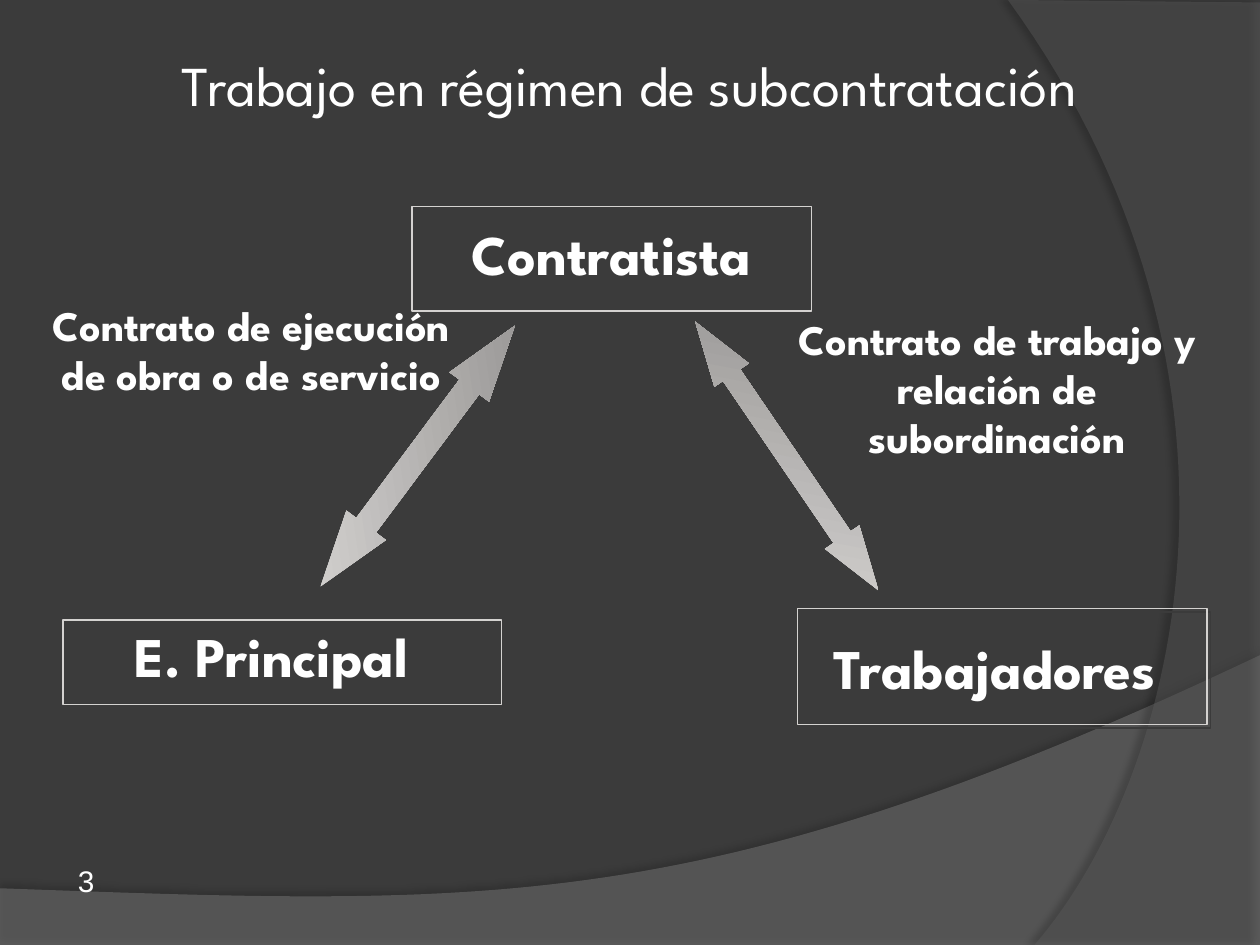
"""Build the slide on work under a subcontracting regime."""
from dataclasses import dataclass

from lxml import etree
from pptx import Presentation
from pptx import util as u
from pptx.dml.color import RGBColor
from pptx.enum import shapes, text
from pptx.oxml import ns

COLORS = {
    "background": "3B3B3B", "white": "FFFFFF", "black": "000000", "border": "D4D2D0",
    "arrow_end": "989695", "wave": "7F7F7F", "arc": "5E5E5E",
}
FONT = "League Spartan"
ARROW_GUIDES = {"adj1": 50000, "adj2": 155000}
Point = tuple[float, float]


@dataclass(frozen=True)
class Box:
    left: float
    top: float
    width: float
    height: float

    def lengths(self) -> list[u.Length]:
        return [u.Inches(value) for value in (self.left, self.top, self.width, self.height)]


@dataclass(frozen=True)
class Shadow:
    color: str
    alpha: int
    blur: float
    distance: float
    angle: int


@dataclass(frozen=True)
class Label:
    content: str
    box: Box
    size: float = 32
    wrap: bool = True
    bold: bool = True
    font: str = FONT
    align: text.PP_ALIGN = text.PP_ALIGN.CENTER
    anchor: text.MSO_ANCHOR = text.MSO_ANCHOR.TOP
    insets: tuple[float, float, float, float] = (0, 0, 0, 0)
    fixed_lines: bool = True


@dataclass(frozen=True)
class Arrow:
    box: Box
    rotation: float


@dataclass(frozen=True)
class Party:
    label: Label
    frame: Box
    arrow: Arrow | None = None


@dataclass(frozen=True)
class Backdrop:
    corners: list[Point]
    curve: list[Point]
    color: str
    alpha: int
    shadow: Shadow


SHAPE_SHADOW = Shadow("background", 100, 0, 2.8, 45)
BACKDROPS = [
    Backdrop([(0, 7.05), (0, 7.51), (10, 7.51)],
             [(10, 5.2), (5.59, 7.29), (3.91, 7.19), (0, 7.05)],
             "wave", 45, Shadow("black", 35, 4, 3.5, 270)),
    Backdrop([(10, 0.02), (10, 7.5)],
             [(8.21, 7.5), (9.35, 6.19), (10.18, 3), (8, 0)],
             "arc", 40, Shadow("black", 45, 4, 4, 180)),
]
HEADINGS = [
    Label("3", Box(0.52, 6.63, 0.51, 0.5), 17, bold=False, font="Arial",
          align=text.PP_ALIGN.LEFT, anchor=text.MSO_ANCHOR.BOTTOM,
          insets=(0.1, 0.05, 0.1, 0), fixed_lines=False),
    Label("Trabajo en régimen de subcontratación", Box(0.5, 0.39, 8.99, 0.56), 32.2,
          bold=False, anchor=text.MSO_ANCHOR.MIDDLE,
          insets=(0.05, 0.05, 0.05, 0.05), fixed_lines=False),
]
PARTIES = [
    Party(Label("Contratista", Box(3.27, 1.89, 3.17, 0.39)), Box(3.27, 1.64, 3.17, 0.83)),
    Party(Label("E. Principal", Box(0.68, 5.08, 2.95, 0.39), wrap=False),
          Box(0.5, 4.92, 3.48, 0.67), Arrow(Box(3.12, 2.33, 0.39, 2.58), 36.7)),
    Party(Label("Trabajadores", Box(6.44, 5.17, 2.91, 0.39), wrap=False),
          Box(6.33, 4.83, 3.25, 0.92), Arrow(Box(6.08, 2.33, 0.33, 2.58), 325.7)),
]
CONTRACTS = [
    Label("Contrato de trabajo y relación de subordinación", Box(6.25, 2.5, 3.33, 1.17), 24),
    Label("Contrato de ejecución de obra o de servicio", Box(0.33, 2.39, 3.33, 1.17), 24),
]


def rgb(name: str) -> RGBColor:
    """Return the named colour."""
    return RGBColor.from_string(COLORS[name])


def add_alpha(color, percent: int) -> None:
    """Set the opacity of a colour element."""
    etree.SubElement(color, ns.qn("a:alpha"), val=str(percent * 1000))


def add_shadow(shape, shadow: Shadow) -> None:
    """Give a shape an outer shadow."""
    shape.shadow.inherit = False
    effects = shape._element.spPr.find(ns.qn("a:effectLst"))
    outer = etree.SubElement(
        effects, ns.qn("a:outerShdw"), blurRad=str(int(u.Pt(shadow.blur))),
        dist=str(int(u.Pt(shadow.distance))), dir=str(shadow.angle * 60000),
        algn="ctr", rotWithShape="0")
    color = etree.SubElement(outer, ns.qn("a:srgbClr"), val=COLORS[shadow.color])
    add_alpha(color, shadow.alpha)


def curve_points(curve: list[Point], steps: int = 60) -> list[Point]:
    """Sample a cubic curve given by its four control points."""
    points = []
    for step in range(steps + 1):
        t = step / steps
        weights = ((1 - t) ** 3, 3 * t * (1 - t) ** 2, 3 * t ** 2 * (1 - t), t ** 3)
        points.append(tuple(sum(w * point[axis] for w, point in zip(weights, curve))
                            for axis in (0, 1)))
    return points


def add_backdrop(target, backdrop: Backdrop) -> None:
    """Draw a translucent curved background area."""
    outline = [(u.Inches(x), u.Inches(y))
               for x, y in backdrop.corners + curve_points(backdrop.curve)]
    builder = target.build_freeform(*outline[0], scale=1.0)
    builder.add_line_segments(outline[1:], close=True)
    shape = builder.convert_to_shape()
    shape.fill.solid()
    shape.fill.fore_color.rgb = rgb(backdrop.color)
    add_alpha(shape._element.spPr.find(".//" + ns.qn("a:srgbClr")), backdrop.alpha)
    shape.line.fill.background()
    add_shadow(shape, backdrop.shadow)


def add_label(target, label: Label) -> None:
    """Draw a text box."""
    frame = target.add_textbox(*label.box.lengths()).text_frame
    frame.word_wrap = label.wrap
    frame.vertical_anchor = label.anchor
    (frame.margin_left, frame.margin_top, frame.margin_right,
     frame.margin_bottom) = map(u.Inches, label.insets)
    paragraph = frame.paragraphs[0]
    paragraph.alignment = label.align
    if label.fixed_lines:
        frame.auto_size = text.MSO_AUTO_SIZE.SHAPE_TO_FIT_TEXT
        paragraph.line_spacing = u.Pt(28)
        paragraph.space_after = u.Pt(4)
    run = paragraph.add_run()
    run.text = label.content
    run.font.name = label.font
    run.font.size = u.Pt(label.size)
    run.font.bold = label.bold
    run.font.color.rgb = rgb("white")


def add_arrow(target, arrow: Arrow) -> None:
    """Draw a rotated double arrow with a gradient."""
    shape = target.add_shape(shapes.MSO_SHAPE.UP_DOWN_ARROW, *arrow.box.lengths())
    shape.rotation = arrow.rotation
    guides = shape._element.spPr.find(".//" + ns.qn("a:avLst"))
    for guide in list(guides):
        guides.remove(guide)
    for name, value in ARROW_GUIDES.items():
        etree.SubElement(guides, ns.qn("a:gd"), name=name, fmla=f"val {value}")
    shape.fill.gradient()
    shape.fill.gradient_angle = 45
    for stop, position, name in zip(shape.fill.gradient_stops, (0, 1), ("border", "arrow_end")):
        stop.position = position
        stop.color.rgb = rgb(name)
    shape.line.fill.background()
    add_shadow(shape, SHAPE_SHADOW)


def add_party(target, party: Party) -> None:
    """Draw a party as a group of arrow, name and frame."""
    group = target.add_group_shape().shapes
    if party.arrow:
        add_arrow(group, party.arrow)
    add_label(group, party.label)
    shape = group.add_shape(shapes.MSO_SHAPE.RECTANGLE, *party.frame.lengths())
    shape.fill.background()
    shape.line.color.rgb = rgb("border")
    shape.line.width = u.Pt(0.75)
    add_shadow(shape, SHAPE_SHADOW)


def main() -> None:
    """Build and save the presentation."""
    presentation = Presentation()
    presentation.slide_width, presentation.slide_height = u.Inches(10), u.Inches(7.5)
    slide = presentation.slides.add_slide(presentation.slide_layouts[6])
    slide.background.fill.solid()
    slide.background.fill.fore_color.rgb = rgb("background")
    for draw, items in ((add_backdrop, BACKDROPS), (add_label, HEADINGS),
                        (add_party, PARTIES), (add_label, CONTRACTS)):
        for item in items:
            draw(slide.shapes, item)
    presentation.save("out.pptx")


if __name__ == "__main__":
    main()
